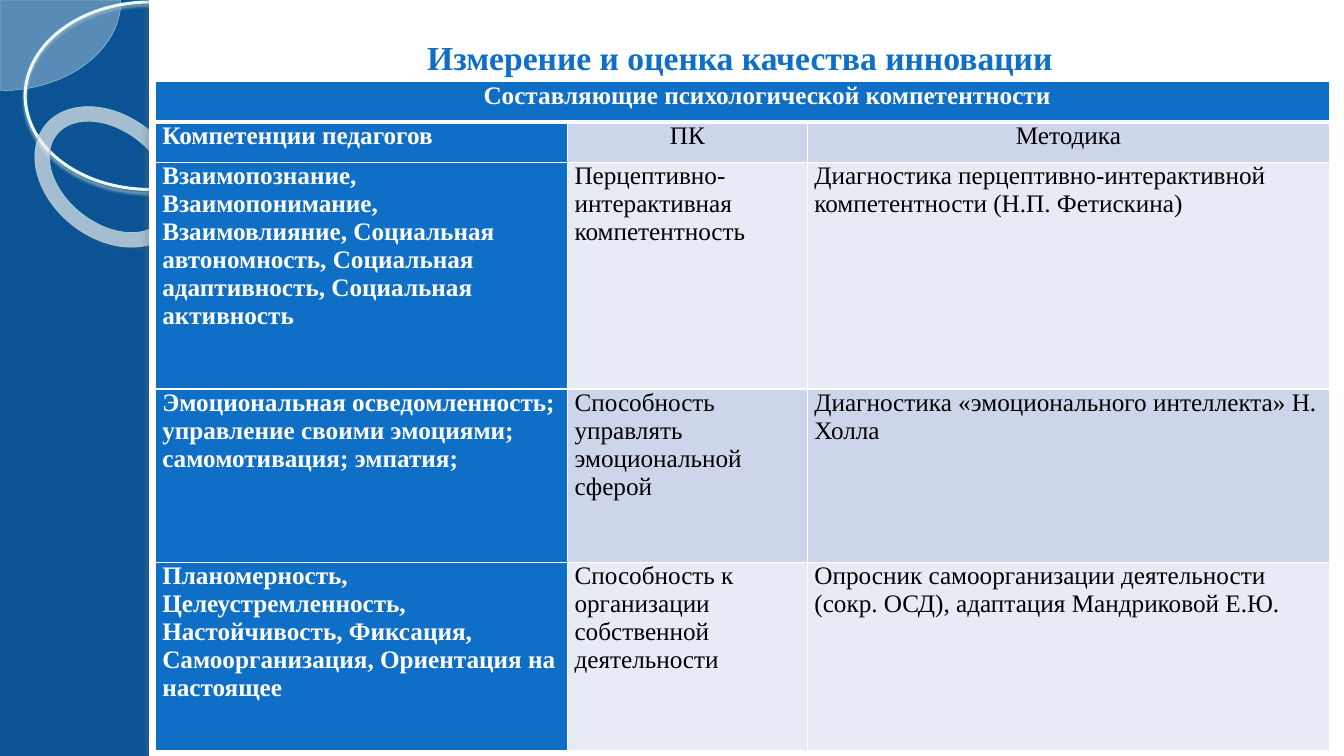
import pptx
import pptx.util
import pptx.dml.color
import pptx.enum.shapes
import pptx.enum.text
import pptx.oxml
import pptx.oxml.ns
import lxml.etree

Pt = pptx.util.Pt
SHAPE = pptx.enum.shapes.MSO_SHAPE
ALIGN = pptx.enum.text.PP_ALIGN
qn = pptx.oxml.ns.qn

COLORS = {
    "navy": "0B5394", "blue": "0F6FC6", "white": "FFFFFF", "black": "000000",
    "band_dark": "CCD5EA", "band_light": "E7EBF5",
    "pie": "F8FEFF", "pie_line": "AFDBE2",
    "ring": "EDFCFF", "ring_shadow": "9CB9BE",
    "donut": "FCFFFF", "donut_line": "A1CFD6", "donut_shadow": "4B5E61",
    "edge_shadow": "6C7A7C",
}

HEADING = "Составляющие психологической компетентности"
ROWS = [
    ("Компетенции педагогов", "ПК", "Методика"),
    ("Взаимопознание, Взаимопонимание, Взаимовлияние, Социальная автономность, "
     "Социальная адаптивность, Социальная активность",
     "Перцептивно-интерактивная компетентность",
     "Диагностика перцептивно-интерактивной компетентности (Н.П. Фетискина)"),
    ("Эмоциональная осведомленность; управление своими эмоциями; самомотивация; эмпатия;",
     "Способность управлять эмоциональной сферой",
     "Диагностика «эмоционального интеллекта» Н. Холла"),
    ("Планомерность,\nЦелеустремленность, Настойчивость, Фиксация, Самоорганизация, "
     "Ориентация на настоящее",
     "Способность к организации собственной деятельности",
     "Опросник самоорганизации деятельности (сокр. ОСД), адаптация Мандриковой Е.Ю."),
]


def rgb(name):
    return pptx.dml.color.RGBColor.from_string(COLORS[name])


class Deck:
    """Style and current slide; lengths are cells of a 160 by 90 grid."""
    font = "Times New Roman"
    columns, rows = 160, 90

    def __init__(self):
        self.prs = pptx.Presentation()
        self.prs.slide_width = pptx.util.Inches(13.33)
        self.prs.slide_height = pptx.util.Inches(7.5)
        self.slide = self.prs.slides.add_slide(self.prs.slide_layouts[5])
        background = self.slide.background.fill
        background.solid()
        background.fore_color.rgb = rgb("navy")

    def x(self, columns):
        return round(self.prs.slide_width * columns / self.columns)

    def y(self, rows):
        return round(self.prs.slide_height * rows / self.rows)

    def box(self, left, top, width, height):
        return self.x(left), self.y(top), self.x(width), self.y(height)

    def color_xml(self, parent, color, alpha):
        tag = lxml.etree.SubElement(parent, qn("a:srgbClr"), val=COLORS[color])
        lxml.etree.SubElement(tag, qn("a:alpha"), val=str(alpha * 1000))

    def shape(self, kind, box, fill=None, alpha=100, line=None, shadow=None,
              adjust=(), rotation=0):
        item = self.slide.shapes.add_shape(kind, *self.box(*box))
        item.rotation = rotation
        for index, value in enumerate(adjust):
            item.adjustments[index] = value
        if fill:
            item.fill.solid()
            item.fill.fore_color.rgb = rgb(fill)
            solid = item._element.spPr.find(qn("a:solidFill"))
            solid.clear()
            self.color_xml(solid, fill, alpha)
        else:
            item.fill.background()
        if line:
            item.line.color.rgb = rgb(line[0])
            item.line.width = Pt(line[1])
        else:
            item.line.fill.background()
        item.shadow.inherit = False
        if shadow:
            color, opacity, blur, distance, angle = shadow
            effects = item._element.spPr.find(qn("a:effectLst"))
            outer = lxml.etree.SubElement(
                effects, qn("a:outerShdw"), blurRad=str(Pt(blur)),
                dist=str(Pt(distance)), dir=str(angle * 60000), rotWithShape="0")
            self.color_xml(outer, color, opacity)

    def text(self, frame, wording, size, color, bold, align):
        frame.text = wording
        frame.word_wrap = True
        for paragraph in frame.paragraphs:
            paragraph.alignment = align
            for run in paragraph.runs:
                run.font.name = self.font
                run.font.size = Pt(size)
                run.font.bold = bold
                run.font.color.rgb = rgb(color)

    def indent(self, paragraph, **inches):
        for name, value in inches.items():
            paragraph._p.get_or_add_pPr().set(name, str(pptx.util.Inches(value)))

    def title(self, wording, box):
        heading = self.slide.shapes.title
        heading.left, heading.top, heading.width, heading.height = self.box(*box)
        frame = heading.text_frame
        self.text(frame, wording, 24, "blue", True, ALIGN.CENTER)
        frame.auto_size = pptx.enum.text.MSO_AUTO_SIZE.NONE
        frame.vertical_anchor = pptx.enum.text.MSO_ANCHOR.TOP
        paragraph = frame.paragraphs[0]
        paragraph.line_spacing = 1.5
        paragraph.space_before = Pt(6)
        self.indent(paragraph, marL=0.09, indent=0)
        # Bring the title in front of the white panel
        self.slide.shapes._spTree.append(heading._element)

    def table(self, left, top, widths, heights):
        frame = self.slide.shapes.add_table(
            len(heights), len(widths), *self.box(left, top, sum(widths), sum(heights)))
        grid = frame.table
        grid.first_row = grid.horz_banding = False
        for column, width in zip(grid.columns, widths):
            column.width = self.x(width)
        for row, height in zip(grid.rows, heights):
            row.height = self.y(height)
        return grid

    def cell(self, cell, wording, fill, color, bold, align, top=1, bottom=1):
        cell.margin_left = cell.margin_right = pptx.util.Inches(0.07)
        cell.margin_top = cell.margin_bottom = 0
        self.text(cell.text_frame, wording, 18, color, bold, align)
        cell.fill.solid()
        cell.fill.fore_color.rgb = rgb(fill)
        properties = cell._tc.get_or_add_tcPr()
        for index, (side, width) in enumerate(
                (("L", 1), ("R", 1), ("T", top), ("B", bottom))):
            border = properties.makeelement(qn("a:ln" + side), {"w": str(Pt(width))})
            solid = lxml.etree.SubElement(border, qn("a:solidFill"))
            self.color_xml(solid, "white", 100)
            properties.insert(index, border)


def main():
    deck = Deck()

    # Circles on the left band
    deck.shape(SHAPE.PIE, (-14.28, -10.68, 28.68, 21.48), "pie", 33,
               ("pie_line", 0.25), adjust=(0, 54.02))
    deck.shape(SHAPE.OVAL, (3, 0.24, 29.76, 22.32), line=("ring", 2.15),
               shadow=("ring_shadow", 85, 2, 2, 90))
    deck.shape(SHAPE.DONUT, (3.24, 13.8, 19.68, 14.52), "donut", 62,
               ("donut_line", 0.58), ("donut_shadow", 35, 1, 1.2, 75),
               adjust=(0.12,), rotation=38.6)

    # White panel and its shaded edge
    deck.shape(SHAPE.RECTANGLE, (17.76, 0, 142.24, 90), "white")
    deck.shape(SHAPE.RECTANGLE, (17.76, 0, 1.32, 90), "white",
               shadow=("edge_shadow", 25, 3, 3, 180))

    deck.title("Измерение и оценка качества инновации", (21.96, 1.44, 131.16, 8.28))

    # Table of competences
    competences = deck.table(18.48, 9.72, (49.08, 28.56, 62.16),
                             (4.8, 4.8, 27, 20.64, 22.44))
    for column in range(3):
        deck.cell(competences.cell(0, column), "" if column else HEADING,
                  "blue", "white", True, ALIGN.CENTER, bottom=3)
    competences.cell(0, 0).merge(competences.cell(0, 2))
    deck.indent(competences.cell(0, 0).text_frame.paragraphs[0], marL=0, indent=0.49)
    for number, wordings in enumerate(ROWS, 1):
        band = "band_dark" if number % 2 else "band_light"
        for column, wording in enumerate(wordings):
            first = column == 0
            centered = number == 1 and not first
            deck.cell(competences.cell(number, column), wording,
                      "blue" if first else band, "white" if first else "black", first,
                      ALIGN.CENTER if centered else ALIGN.LEFT,
                      top=3 if number == 1 else 1)

    deck.prs.save("out.pptx")


if __name__ == "__main__":
    main()
